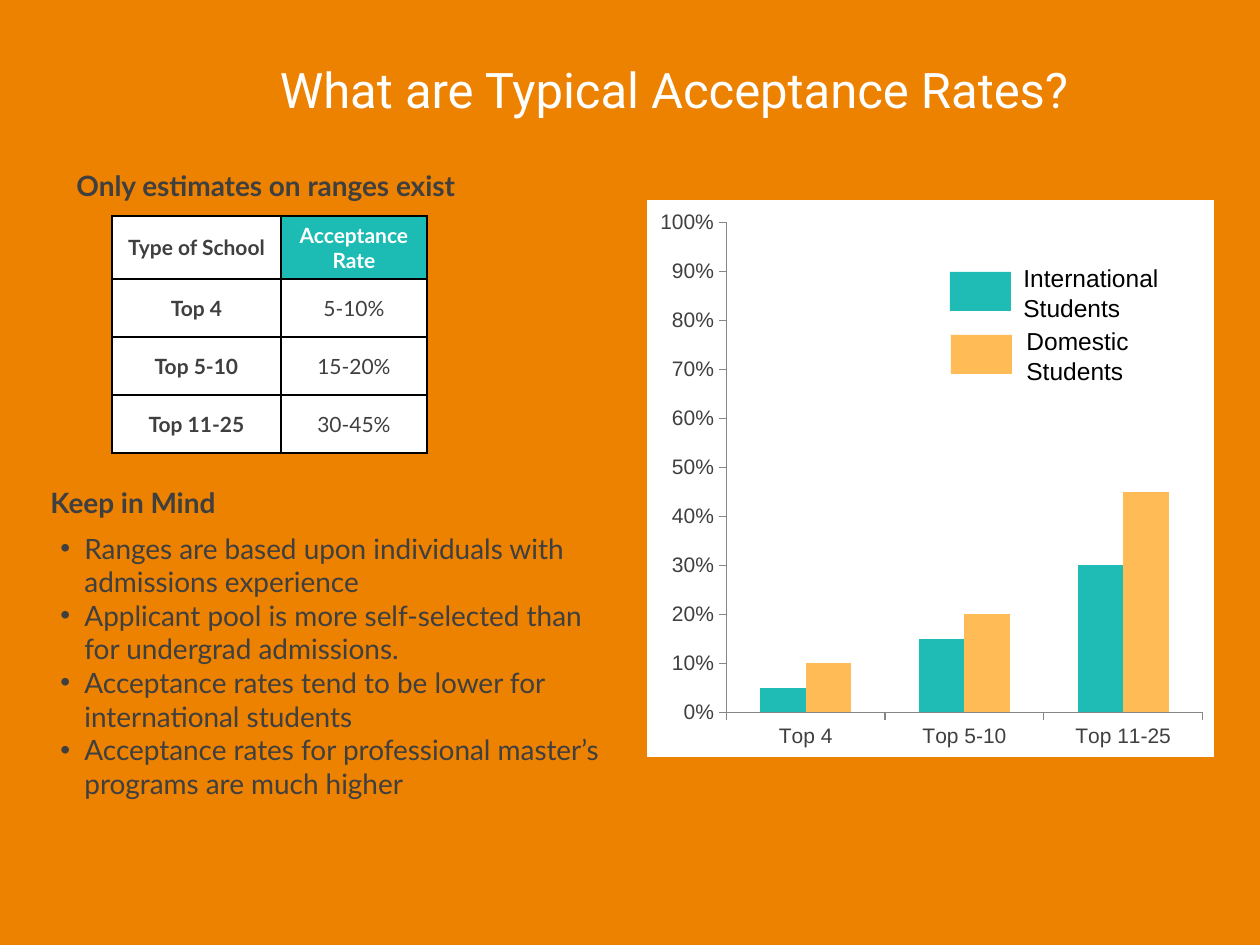
from lxml.etree import SubElement, fromstring
from pptx import Presentation
from pptx.chart.data import CategoryChartData
from pptx.dml.color import RGBColor
from pptx.enum.chart import XL_CHART_TYPE as ChartType, XL_TICK_MARK as TickMark
from pptx.enum.shapes import MSO_SHAPE as Shape
from pptx.enum.text import MSO_ANCHOR as Anchor, PP_ALIGN as Align
from pptx.oxml.ns import nsdecls, qn
from pptx.util import Pt

SCALE = 914400 / 126
ORANGE = RGBColor(0xED, 0x81, 0x00)
WHITE = RGBColor(0xFF, 0xFF, 0xFF)
BLACK = RGBColor(0x00, 0x00, 0x00)
GRAY = RGBColor(0x3F, 0x3F, 0x3F)
AXIS_GRAY = RGBColor(0x86, 0x86, 0x86)
HEADER_TEAL = RGBColor(0x1C, 0xBB, 0xB4)
TEAL = RGBColor(0x1E, 0xBC, 0xB4)
AMBER = RGBColor(0xFF, 0xBB, 0x55)

TABLE_ROWS = [
    ("Type of School", "Acceptance Rate"),
    ("Top 4", "5-10%"),
    ("Top 5-10", "15-20%"),
    ("Top 11-25", "30-45%"),
]
REMINDERS = [
    "Ranges are based upon individuals with admissions experience",
    "Applicant pool is more self-selected than for undergrad admissions.",
    "Acceptance rates tend to be lower for international students",
    "Acceptance rates for professional master’s programs are much higher",
]
SERIES = [
    ("Series 1", (0.05, 0.15, 0.3), TEAL, "International Students"),
    ("Series 2", (0.1, 0.2, 0.45), AMBER, "Domestic\nStudents"),
]


def px(value):
    """Turn a length in px into EMU."""
    return round(value * SCALE)


def set_font(font, name, size, color, bold=False):
    """Set the look of a font."""
    font.name, font.size, font.bold = name, Pt(size), bold
    font.color.rgb = color


def add_text(slide, box, text, name, size, color, bold=False, align=Align.LEFT):
    """Add a wrapping text box and return its text frame."""
    text_frame = slide.shapes.add_textbox(*map(px, box)).text_frame
    text_frame.word_wrap = True
    text_frame.text = text
    for paragraph in text_frame.paragraphs:
        paragraph.alignment = align
        for run in paragraph.runs:
            set_font(run.font, name, size, color, bold)
    return text_frame


def add_title(slide, box):
    """Place the slide title."""
    text_frame = add_text(slide, box, "What are Typical Acceptance Rates?",
                          "Roboto", 28, WHITE, align=Align.CENTER)
    text_frame.vertical_anchor = Anchor.MIDDLE


def style_cell(cell, text, fill, color, bold):
    """Fill one table cell and give it a black border."""
    cell.text = text
    cell.vertical_anchor = Anchor.MIDDLE
    paragraph = cell.text_frame.paragraphs[0]
    paragraph.alignment = Align.CENTER
    set_font(paragraph.runs[0].font, "Lato", 12, color, bold)
    properties = cell._tc.get_or_add_tcPr()
    for side in ("lnL", "lnR", "lnT", "lnB"):
        line = SubElement(properties, qn(f"a:{side}"), w=str(Pt(1)))
        solid = SubElement(line, qn("a:solidFill"))
        SubElement(solid, qn("a:srgbClr"), val=str(BLACK))
    cell.fill.solid()
    cell.fill.fore_color.rgb = fill


def add_estimates(slide, box):
    """Place the heading and the table of acceptance rates."""
    left, top, width, height = box
    add_text(slide, (left, top + 1, width - 6, 63), "Only estimates on ranges exist",
             "Lato", 16, GRAY, True, Align.CENTER)
    row_height = (height - 56) // len(TABLE_ROWS)
    table_box = (left + 68, top + 55, 315, row_height * len(TABLE_ROWS))
    table = slide.shapes.add_table(len(TABLE_ROWS), 2, *map(px, table_box)).table
    for column, column_width in zip(table.columns, (169, 146)):
        column.width = px(column_width)
    for i, texts in enumerate(TABLE_ROWS):
        table.rows[i].height = px(row_height)
        for j, text in enumerate(texts):
            accent = i == 0 and j == 1
            style_cell(table.cell(i, j), text, HEADER_TEAL if accent else WHITE,
                       WHITE if accent else GRAY, i == 0 or j == 0)


def add_reminders(slide, box):
    """Place the heading and the bulleted reminders."""
    left, top, width, height = box
    add_text(slide, (left, top, 533, 69), "Keep in Mind", "Lato", 16, GRAY, True)
    text_frame = add_text(slide, (left + 10, top + 46, width - 10, height - 46),
                          "\n".join(REMINDERS), "Lato", 16, GRAY)
    for paragraph in text_frame.paragraphs:
        properties = paragraph._p.get_or_add_pPr()
        properties.set("marL", str(px(24)))
        properties.set("indent", str(-px(24)))
        color = SubElement(properties, qn("a:buClr"))
        SubElement(color, qn("a:srgbClr"), val=str(GRAY))
        SubElement(properties, qn("a:buFont"), typeface="Arial")
        SubElement(properties, qn("a:buChar"), char="•")


def white_area():
    """Return chart area properties with a white fill and no line."""
    return fromstring(
        f'<c:spPr {nsdecls("c", "a")}><a:solidFill><a:srgbClr val="{WHITE}"/>'
        '</a:solidFill><a:ln><a:noFill/></a:ln></c:spPr>')


def style_areas(chart):
    """Set the plot position and the white chart and plot backgrounds."""
    chart_element = chart._chartSpace.find(qn("c:chart"))
    chart_element.addnext(white_area())
    plot_area = chart_element.find(qn("c:plotArea"))
    plot_area.append(white_area())
    for layout in plot_area.findall(qn("c:layout")):
        plot_area.remove(layout)
    layout = fromstring(f'<c:layout {nsdecls("c")}/>')
    manual = SubElement(layout, qn("c:manualLayout"))
    settings = (("layoutTarget", "inner"), ("xMode", "edge"), ("yMode", "edge"),
                ("x", 0.14), ("y", 0.04), ("w", 0.84), ("h", 0.88))
    for tag, value in settings:
        SubElement(manual, qn(f"c:{tag}"), val=str(value))
    plot_area.insert(0, layout)


def add_rate_chart(slide, box):
    """Place the column chart of acceptance rates."""
    data = CategoryChartData(number_format="0%")
    data.categories = [school for school, _ in TABLE_ROWS[1:]]
    for name, values, _, _ in SERIES:
        data.add_series(name, values)
    chart = slide.shapes.add_chart(ChartType.COLUMN_CLUSTERED, *map(px, box), data).chart
    chart.has_legend = chart.has_title = False
    set_font(chart.font, "Arial", 18, BLACK)
    plot = chart.plots[0]
    plot.gap_width, plot.overlap, plot.vary_by_categories = 150, 0, False
    for series, (_, _, color, _) in zip(plot.series, SERIES):
        series.format.fill.solid()
        series.format.fill.fore_color.rgb = color
    for axis in (chart.category_axis, chart.value_axis):
        axis.has_major_gridlines = False
        axis.major_tick_mark = TickMark.OUTSIDE
        axis.minor_tick_mark = TickMark.NONE
        axis.format.line.color.rgb = AXIS_GRAY
        set_font(axis.tick_labels.font, "Arial", 12, GRAY)
    axis = chart.value_axis
    axis.minimum_scale, axis.maximum_scale, axis.major_unit = 0, 1, 0.1
    axis.tick_labels.number_format = "0%"
    axis.tick_labels.number_format_is_linked = False
    style_areas(chart)


def add_legend(slide, box):
    """Place the colour swatches and their labels."""
    left, top, width, height = box
    step = height // len(SERIES)
    for i, (_, _, color, label) in enumerate(SERIES):
        x, y = left + i, top + i * step
        swatch = slide.shapes.add_shape(Shape.RECTANGLE, *map(px, (x, y + 15, 61, 39)))
        swatch.shadow.inherit = False
        swatch.fill.solid()
        swatch.fill.fore_color.rgb = color
        swatch.line.fill.background()
        add_text(slide, (x + 61 + 2 * i, y, width - 61, 69), label, "Arial", 14, BLACK)


def main():
    """Build the slide and save it."""
    presentation = Presentation()
    presentation.slide_width, presentation.slide_height = px(1260), px(945)
    slide = presentation.slides.add_slide(presentation.slide_layouts[6])
    slide.background.fill.solid()
    slide.background.fill.fore_color.rgb = ORANGE
    add_title(slide, (44, 24, 1260, 130))
    add_estimates(slide, (44, 161, 450, 288))
    add_reminders(slide, (38, 479, 586, 394))
    add_rate_chart(slide, (647, 200, 567, 557))
    add_legend(slide, (950, 257, 245, 126))
    presentation.save("out.pptx")


if __name__ == "__main__":
    main()
